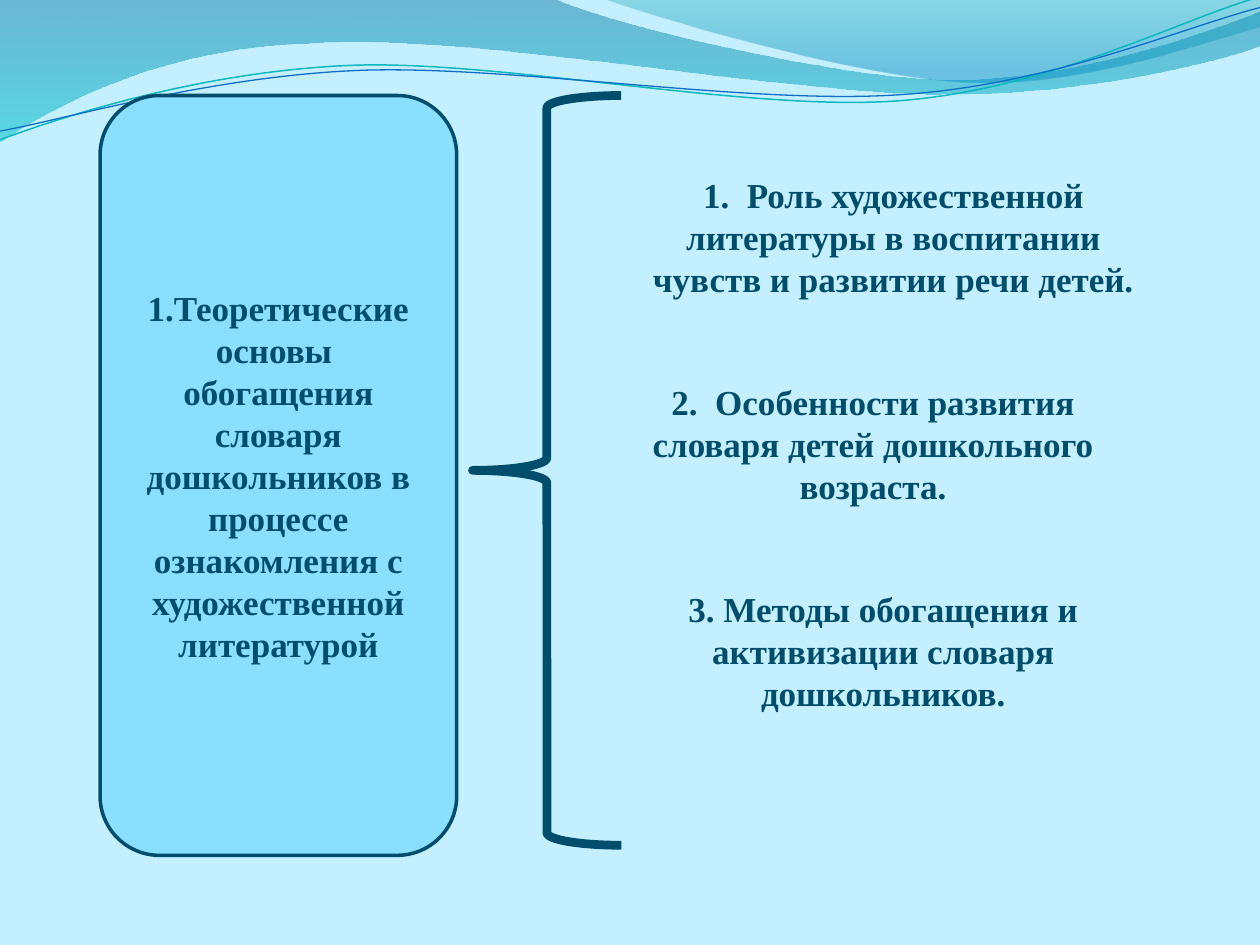
"""Slide with a chapter title, a brace and its three sections under a wave header."""
from math import cos, radians, sin

from lxml.etree import SubElement
from pptx import Presentation
from pptx.dml.color import RGBColor
from pptx.enum.shapes import MSO_SHAPE as Shape
from pptx.enum.text import MSO_ANCHOR as Anchor, MSO_AUTO_SIZE as AutoSize, PP_ALIGN as Align
from pptx.oxml.ns import qn
from pptx.util import Pt

SKY = RGBColor(0xC4, 0xEF, 0xFF)
PANEL = RGBColor(0x8A, 0xDF, 0xFF)
NAVY = RGBColor(0x00, 0x4E, 0x6C)
DEEP_BLUE = RGBColor(0x00, 0x74, 0xA1)
CYAN = RGBColor(0x00, 0xC6, 0xCF)
TEAL = RGBColor(0x00, 0xA1, 0xA9)
OCEAN = RGBColor(0x00, 0x8B, 0xBF)
TURQUOISE = RGBColor(0x0A, 0xB8, 0xBF)
BLUE = RGBColor(0x0F, 0x6F, 0xC6)

CHAPTER = ("1.Теоретические основы  обогащения словаря дошкольников "
           "в процессе ознакомления с художественной литературой")
CHAPTER_BOX = (57.2, 54.6, 203.8, 434.2)
BRACE_BOX = (270, 54.6, 85, 428.4)
SECTIONS = [
    ("1.  Роль художественной литературы в воспитании чувств и развитии речи детей.", 365.8, 289.4),
    ("2.  Особенности развития словаря детей дошкольного возраста.", 354.2, 289.4),
    ("3. Методы обогащения и активизации словаря дошкольников.", 377.3, 254.9),
]
SECTION_TOP, SECTION_STEP, SECTION_HEIGHT = 95.8, 118.1, 79.9

WAVES = [
    ((-0.7, -0.7, 721.4, 82.1),
     [(0, 0), (316.8, -0.7),
      (342.7, 12.2, 478.1, 45.4, 545.8, 45.4), (614.2, 45.4, 689.8, 18.7, 720, 6.5),
      (720.7, 25.9), (707.8, 31.7, 626.4, 54.7, 537.1, 54),
      (447.8, 54, 275, 20.2, 185, 24.5), (92.9, 25.9, 33.1, 59.8, -0.7, 81.4), (0, 0)],
     [(0, DEEP_BLUE, 45), (1, CYAN, 55)]),
    ((344.9, -0.7, 375.1, 50.4),
     [(344.9, -0.7), (366.5, 7.9, 491, 44.6, 553.7, 46.8),
      (616.3, 49.7, 691.9, 23, 720, 15.1), (720, 0), (344.9, -0.7)],
     [(0, TEAL, 30), (0.8, OCEAN, 45)]),
]
RIPPLES = [
    ((-1.4, 15.8, 721.4, 51.1),
     [(0, 79.9), (34.6, 67, 113.8, 41, 199.4, 37.4),
      (284.4, 33.8, 427, 64.1, 513.4, 57.6), (599.8, 51.1, 675.4, 10.8, 718.6, -1.4)],
     TURQUOISE, 0.85),
    ((-1.4, 21.6, 722.2, 41.8),
     [(0, 74.9), (33.8, 69.1, 118.1, 43.9, 203.8, 40.3),
      (290.2, 36.7, 429.8, 60.5, 516.2, 54), (601.9, 48.2, 677.5, 15.1, 720, 4.3)],
     BLUE, 0.75),
]
RIPPLE_TILT = -2.7


def draw(shapes, box, route, tilt=0):
    left, top, width, height = box
    builder = shapes.build_freeform(Pt(left), Pt(top))
    builder.add_line_segments([(Pt(left + width), Pt(top + height))], close=False)
    outline = builder.convert_to_shape()
    outline.shadow.inherit = False
    outline.rotation = tilt
    track = outline.element.spPr.find(".//" + qn("a:path"))
    for leg in list(track):
        track.remove(leg)
    turn = radians(-tilt)
    for index, leg in enumerate(route):
        kind = "a:cubicBezTo" if len(leg) == 6 else "a:lnTo" if index else "a:moveTo"
        node = SubElement(track, qn(kind))
        for x, y in zip(leg[::2], leg[1::2]):
            dx, dy = x - left - width / 2, y - top - height / 2
            across = width / 2 + dx * cos(turn) - dy * sin(turn)
            down = height / 2 + dx * sin(turn) + dy * cos(turn)
            SubElement(node, qn("a:pt"), x=str(int(Pt(across))), y=str(int(Pt(down))))
    if route[0] == route[-1]:
        track.remove(track[-1])
        SubElement(track, qn("a:close"))
    return outline


def add_wave(shapes, box, route, stops):
    wave = draw(shapes, box, route)
    wave.line.fill.background()
    wave.fill.gradient()
    wave.fill.gradient_angle = 270
    for stop, (position, color, _) in zip(wave.fill.gradient_stops, stops):
        stop.position = position
        stop.color.rgb = color
    for tint, (_, _, opacity) in zip(wave.element.spPr.iter(qn("a:srgbClr")), stops):
        SubElement(tint, qn("a:alpha"), val=str(opacity * 1000))


def add_ripple(shapes, box, route, color, width):
    ripple = draw(shapes, box, route, RIPPLE_TILT)
    ripple.fill.background()
    ripple.line.color.rgb = color
    ripple.line.width = Pt(width)


def add_outlined(shapes, kind, box, width):
    shape = shapes.add_shape(kind, *map(Pt, box))
    shape.shadow.inherit = False
    shape.fill.background()
    shape.line.color.rgb = NAVY
    shape.line.width = Pt(width)
    return shape


def write(frame, text):
    frame.word_wrap = True
    frame.text = text
    paragraph = frame.paragraphs[0]
    paragraph.alignment = Align.CENTER
    font = paragraph.runs[0].font
    font.name, font.size, font.bold = "Times New Roman", Pt(20), True
    font.color.rgb = NAVY


def main():
    deck = Presentation()
    deck.slide_width, deck.slide_height = Pt(720), Pt(540)
    slide = deck.slides.add_slide(deck.slide_layouts[6])
    slide.background.fill.solid()
    slide.background.fill.fore_color.rgb = SKY
    shapes = slide.shapes

    for wave in WAVES:
        add_wave(shapes, *wave)
    for ripple in RIPPLES:
        add_ripple(shapes, *ripple)

    chapter = add_outlined(shapes, Shape.FLOWCHART_ALTERNATE_PROCESS, CHAPTER_BOX, 2)
    chapter.fill.solid()
    chapter.fill.fore_color.rgb = PANEL
    chapter.text_frame.vertical_anchor = Anchor.MIDDLE
    write(chapter.text_frame, CHAPTER)

    for index, (text, left, width) in enumerate(SECTIONS):
        top = SECTION_TOP + index * SECTION_STEP
        section = shapes.add_textbox(Pt(left), Pt(top), Pt(width), Pt(SECTION_HEIGHT))
        write(section.text_frame, text)
        section.text_frame.auto_size = AutoSize.SHAPE_TO_FIT_TEXT

    add_outlined(shapes, Shape.LEFT_BRACE, BRACE_BOX, 5)
    deck.save("out.pptx")


if __name__ == "__main__":
    main()
